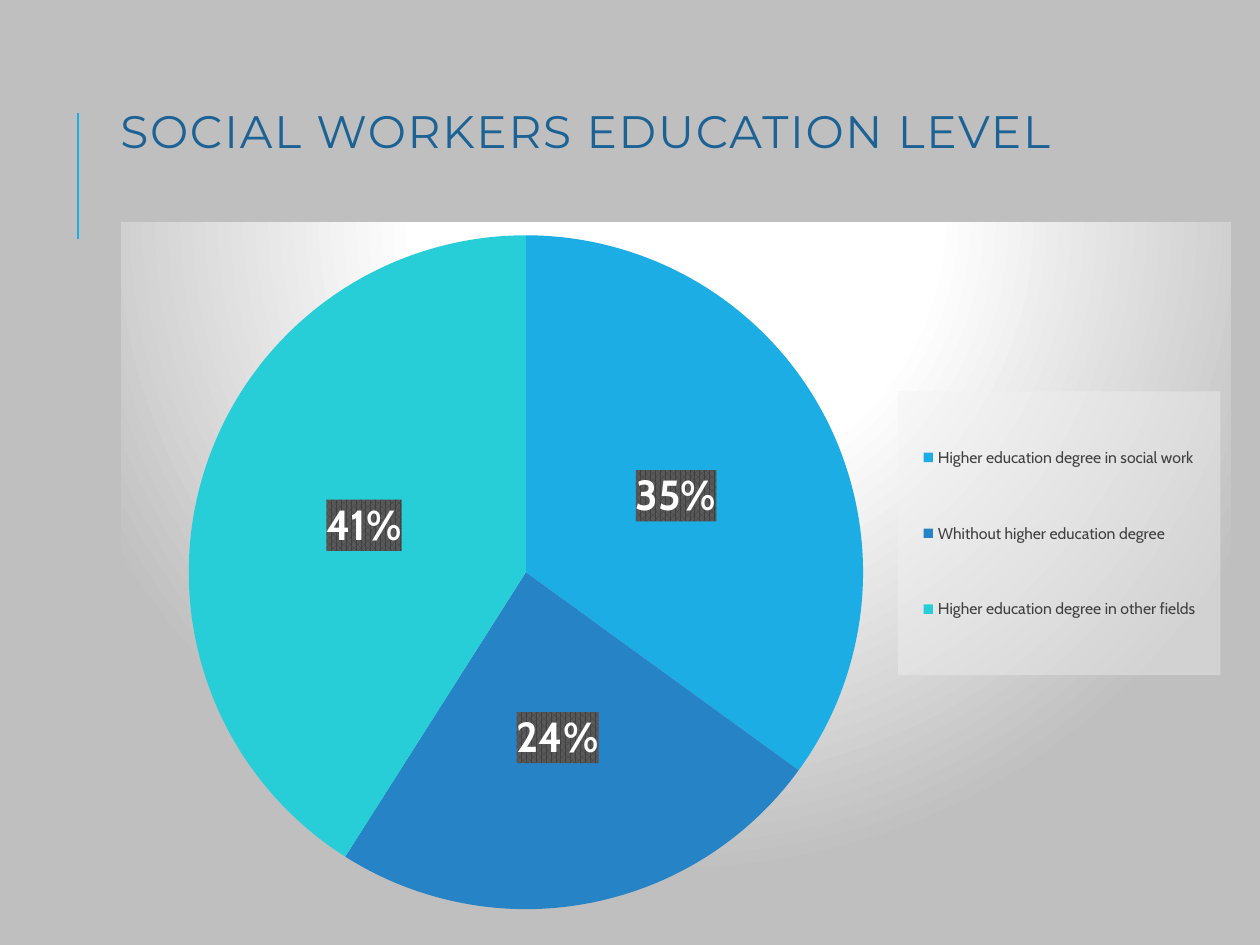
from dataclasses import dataclass

from lxml.etree import SubElement
from pptx import Presentation
from pptx.chart.data import CategoryChartData
from pptx.dml.color import RGBColor
from pptx.enum.chart import XL_CHART_TYPE as ChartType
from pptx.enum.chart import XL_LABEL_POSITION as LabelPosition
from pptx.enum.chart import XL_LEGEND_POSITION as LegendPosition
from pptx.enum.shapes import MSO_CONNECTOR as Connector
from pptx.enum.text import MSO_ANCHOR as Anchor
from pptx.enum.text import MSO_AUTO_SIZE as AutoSize
from pptx.enum.text import PP_ALIGN as Align
from pptx.oxml import parse_xml
from pptx.oxml.ns import nsdecls, qn
from pptx.util import Pt


@dataclass(frozen=True)
class Theme:
    background: str = "BFBFBF"
    accent: str = "1CADE4"
    slices: tuple = ("1CADE4", "2683C6", "27CED7")
    title: str = "1D6294"
    text: str = "000000"
    legend_text: str = "404040"
    legend_fill: str = "F2F2F2"
    label_text: str = "FFFFFF"
    label_dark: str = "404040"
    label_light: str = "595959"
    glow: str = "FFFFFF"
    title_font: str = "Montserrat"
    body_font: str = "Cabin"
    title_size: float = 26
    chart_size: float = 10
    legend_size: float = 9
    label_size: float = 24


def color(code):
    return RGBColor.from_string(code)


def set_font(font, name, size, code, bold=False):
    font.name, font.size, font.bold = name, Pt(size), bold
    font.color.rgb = color(code)


def shape_properties(content):
    return parse_xml(f'<c:spPr {nsdecls("c", "a")}>{content}</c:spPr>')


def manual_layout(x, y, width, height, inner=False):
    """Chart layout in fractions of the chart area."""
    target = '<c:layoutTarget val="inner"/>' if inner else ""
    return parse_xml(
        f'<c:layout {nsdecls("c")}><c:manualLayout>{target}'
        '<c:xMode val="edge"/><c:yMode val="edge"/>'
        f'<c:x val="{x}"/><c:y val="{y}"/><c:w val="{width}"/><c:h val="{height}"/>'
        "</c:manualLayout></c:layout>"
    )


class SlideBuilder:
    """Holds the theme and the slide being built; lengths are in points."""

    def __init__(self, deck, theme):
        self.theme = theme
        self.slide = deck.slides.add_slide(deck.slide_layouts[5])
        fill = self.slide.background.fill
        fill.solid()
        fill.fore_color.rgb = color(theme.background)

    def title(self, text, left, top, width, height):
        box = self.slide.shapes.title
        box.left, box.top, box.width, box.height = map(Pt, (left, top, width, height))
        frame = box.text_frame
        frame.text = text
        frame.word_wrap = True
        frame.auto_size = AutoSize.NONE
        frame.vertical_anchor = Anchor.MIDDLE
        para = frame.paragraphs[0]
        para.alignment = Align.CENTER
        para.line_spacing = 0.8
        set_font(para.font, self.theme.title_font, self.theme.title_size, self.theme.title)
        para.runs[0].font._element.set("spc", "100")

    def line(self, x1, y1, x2, y2, width):
        line = self.slide.shapes.add_connector(
            Connector.STRAIGHT, Pt(x1), Pt(y1), Pt(x2), Pt(y2))
        line.line.color.rgb = color(self.theme.accent)
        line.line.width = Pt(width)
        SubElement(line._element.spPr, qn("a:effectLst"))

    def pie(self, shares, left, top, width, height):
        data = CategoryChartData()
        data.categories = list(shares)
        data.add_series("Series 1", shares.values())
        chart = self.slide.shapes.add_chart(
            ChartType.PIE, Pt(left), Pt(top), Pt(width), Pt(height), data).chart
        chart.has_title = False
        set_font(chart.font, self.theme.body_font, self.theme.chart_size, self.theme.text)
        self.chart_area(chart)
        plot = chart.plots[0]
        plot.vary_by_categories = True
        for index, code in enumerate(self.theme.slices):
            fill = plot.series[0].points[index].format.fill
            fill.solid()
            fill.fore_color.rgb = color(code)
        self.pie_labels(plot.series[0].data_labels)
        self.legend(chart)

    def chart_area(self, chart):
        """Radial glow behind the pie, and the place of the pie itself."""
        theme = self.theme
        stops = "".join(
            f'<a:gs pos="{place * 1000}"><a:srgbClr val="{code}"/></a:gs>'
            for place, code in ((0, theme.glow), (39, theme.glow), (100, theme.background)))
        area = chart._chartSpace.find(qn("c:chart"))
        area.addnext(shape_properties(
            f'<a:gradFill><a:gsLst>{stops}</a:gsLst><a:path path="circle">'
            '<a:fillToRect l="50000" t="-80000" r="50000" b="180000"/></a:path></a:gradFill>'
            f'<a:ln w="{Pt(0.75)}"><a:solidFill><a:srgbClr val="{theme.background}"/>'
            "</a:solidFill></a:ln>"))
        plot_area = area.find(qn("c:plotArea"))
        for layout in plot_area.findall(qn("c:layout")):
            plot_area.remove(layout)
        plot_area.insert(0, manual_layout(0.06, 0.02, 0.61, 0.95, inner=True))

    def pie_labels(self, labels):
        theme = self.theme
        labels.show_percentage = True
        labels.show_value = False
        labels.number_format = "0%"
        labels.number_format_is_linked = False
        labels.position = LabelPosition.CENTER
        set_font(labels.font, theme.body_font, theme.label_size, theme.label_text, bold=True)
        labels._element.find(qn("c:txPr")).addprevious(shape_properties(
            '<a:pattFill prst="pct75">'
            f'<a:fgClr><a:srgbClr val="{theme.label_dark}"/></a:fgClr>'
            f'<a:bgClr><a:srgbClr val="{theme.label_light}"/></a:bgClr></a:pattFill>'
            "<a:ln><a:noFill/></a:ln>"))

    def legend(self, chart):
        theme = self.theme
        chart.has_legend = True
        legend = chart.legend
        legend.position = LegendPosition.RIGHT
        legend.include_in_layout = False
        set_font(legend.font, theme.body_font, theme.legend_size, theme.legend_text)
        element = legend._element
        for layout in element.findall(qn("c:layout")):
            element.remove(layout)
        element.find(qn("c:legendPos")).addnext(manual_layout(0.7, 0.24, 0.29, 0.4))
        element.find(qn("c:txPr")).addprevious(shape_properties(
            f'<a:solidFill><a:srgbClr val="{theme.legend_fill}"><a:alpha val="39000"/>'
            "</a:srgbClr></a:solidFill><a:ln><a:noFill/></a:ln>"))


def main():
    deck = Presentation()
    deck.slide_width, deck.slide_height = Pt(720), Pt(540)
    page = SlideBuilder(deck, Theme())
    page.line(44.64, 136.8, 44.64, 64.8, width=1.5)
    page.title("SOCIAL WORKERS EDUCATION LEVEL", -5.76, 53.28, 681.12, 48.24)
    page.pie(
        {
            "Higher education degree in social work": 35,
            "Whithout higher education degree": 24,
            "Higher education degree in other fields": 41,
        },
        68.4, 126, 635.76, 406.08)
    deck.save("out.pptx")


if __name__ == "__main__":
    main()
